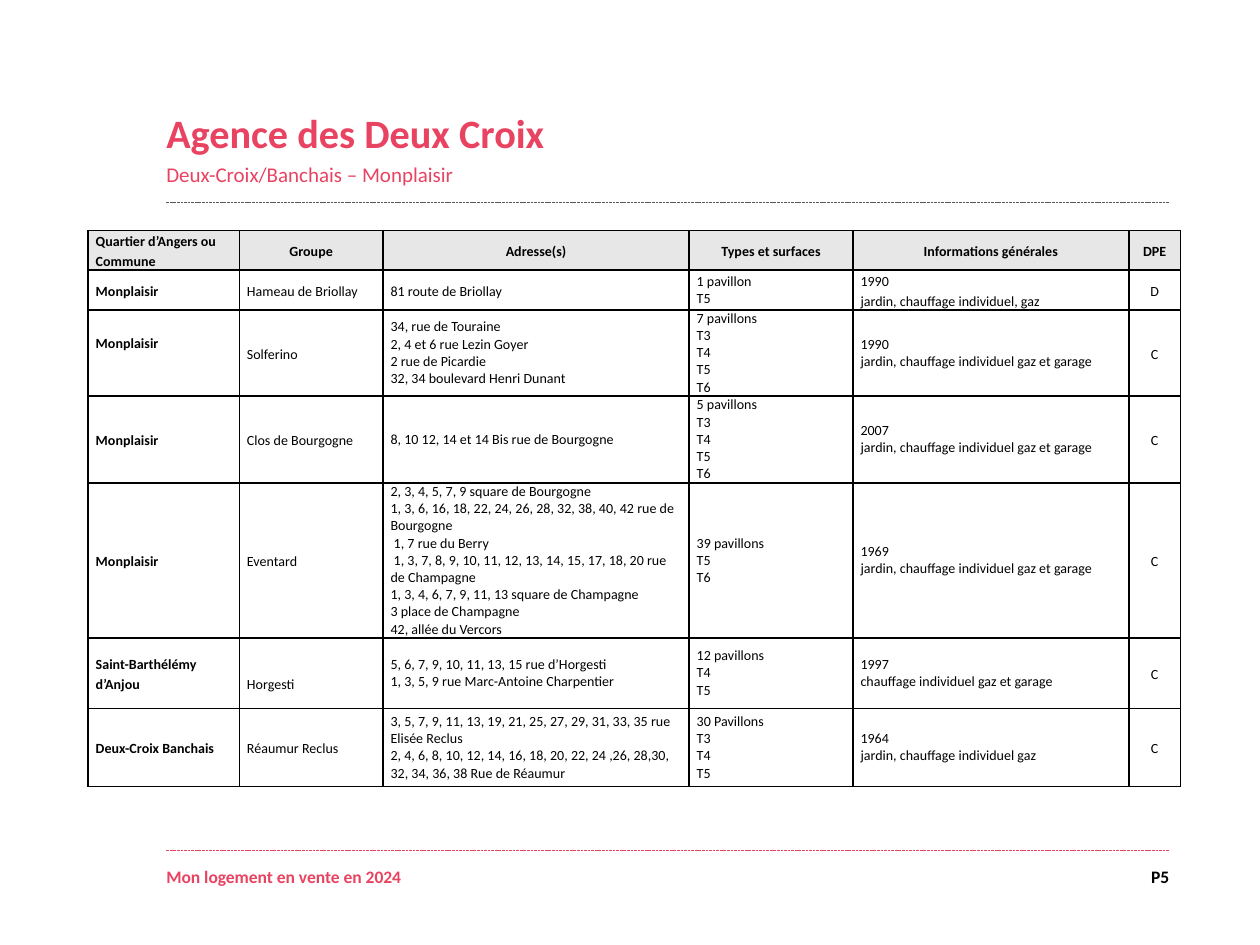
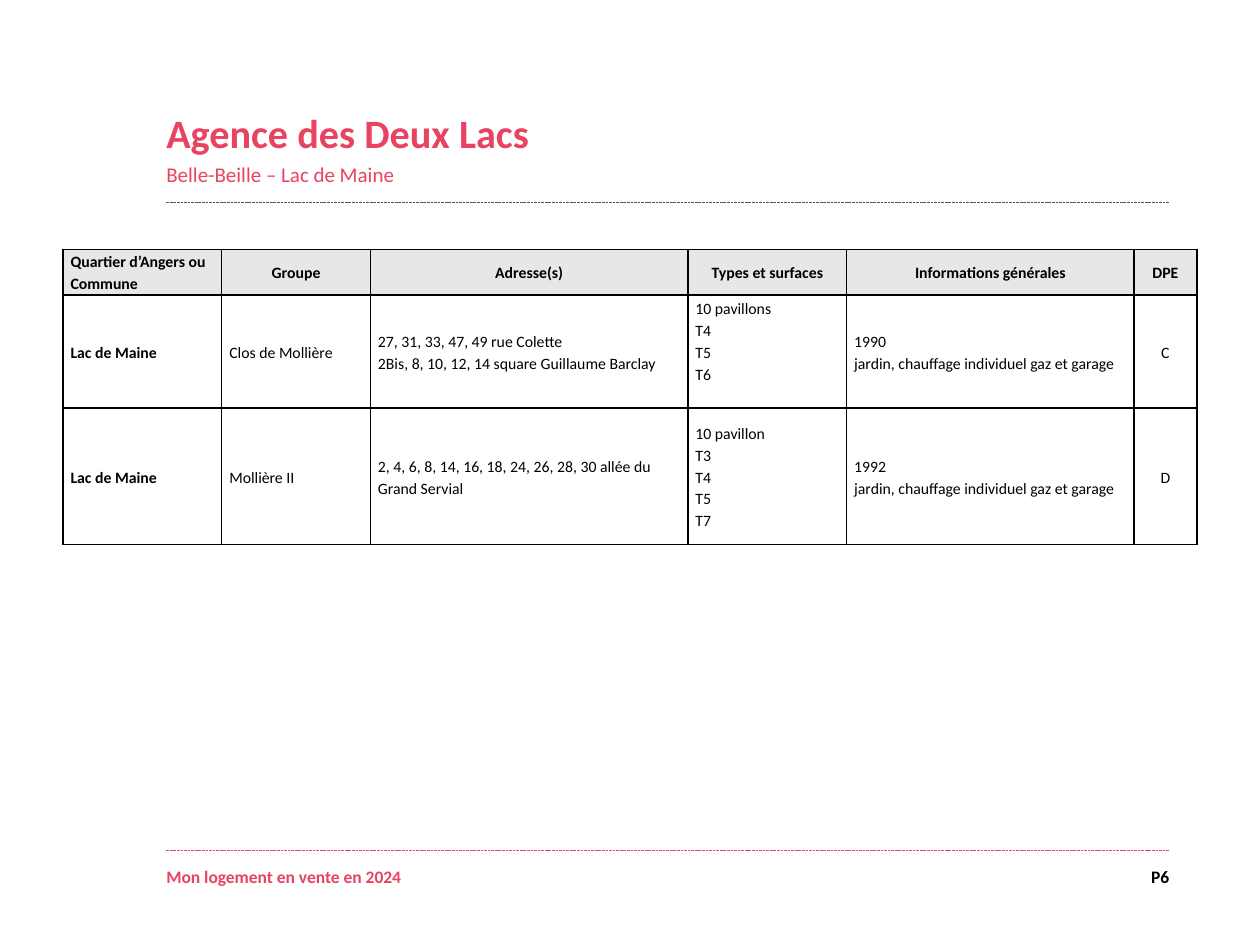
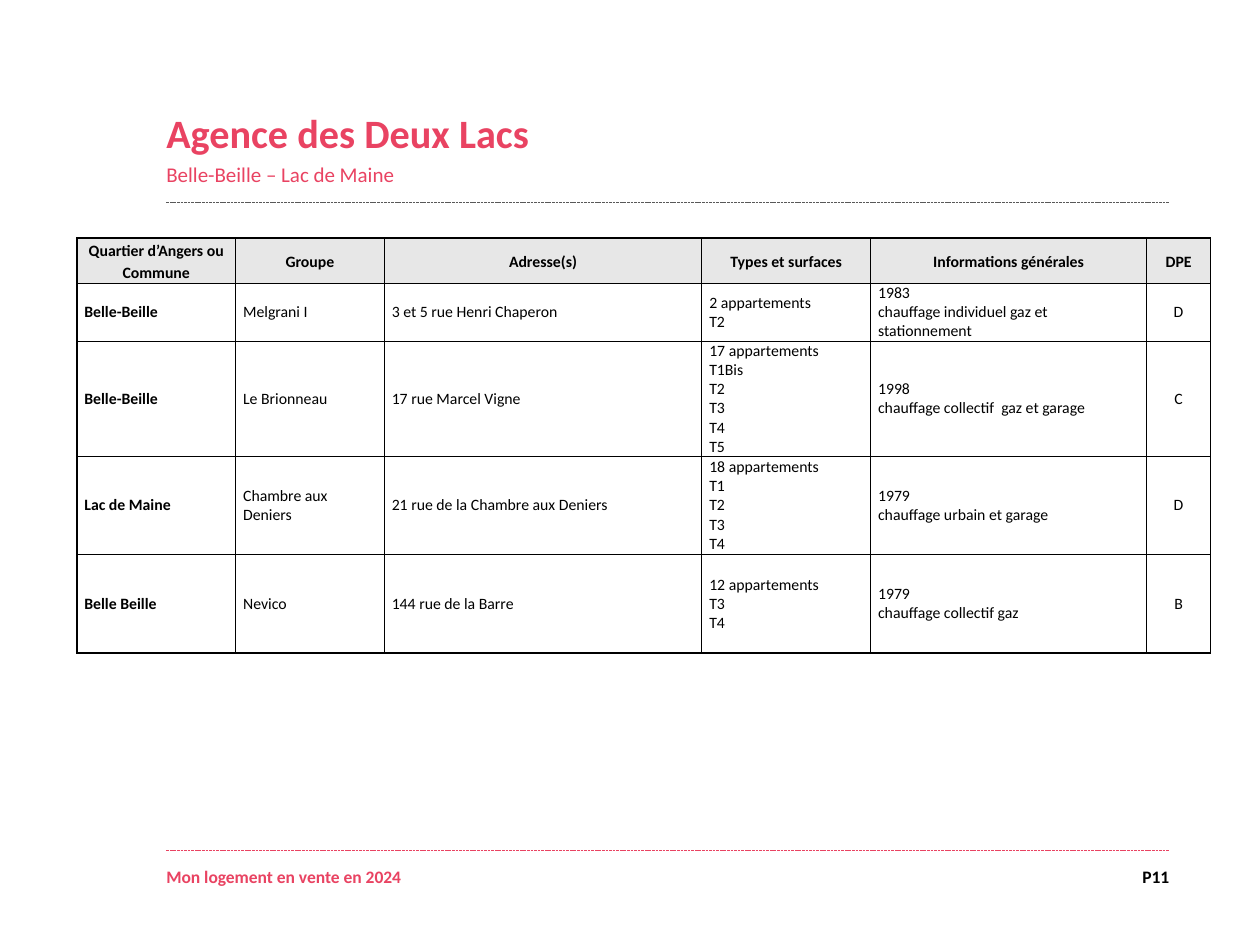
"""Build the three housing-sale slides, each with one agency table."""
from dataclasses import dataclass

from lxml import etree
from pptx import Presentation
from pptx.dml.color import RGBColor as RGB
from pptx.enum.dml import MSO_LINE
from pptx.enum.shapes import MSO_CONNECTOR as CONN
from pptx.enum.text import MSO_ANCHOR as ANCHOR, MSO_AUTO_SIZE as AUTO, PP_ALIGN as ALIGN
from pptx.oxml.ns import qn
from pptx.util import Inches, Pt


@dataclass(frozen=True)
class Theme:
    font: str = "Calibri"
    accent: RGB = RGB(0xE9, 0x43, 0x62)
    ink: RGB = RGB(0, 0, 0)
    rule: RGB = RGB(0x59, 0x59, 0x59)
    header: RGB = RGB(0xE7, 0xE7, 0xE7)
    title: int = 23
    subtitle: int = 12
    footer: int = 10
    left: float = 1.32
    right: float = 9.28


HEADERS = ["Quartier d’Angers ou Commune", "Groupe", "Adresse(s)",
           "Types et surfaces", "Informations générales", "DPE"]
FOOTER = "Mon logement en vente en 2024"
GARDEN_GARAGE = "jardin, chauffage individuel gaz et garage"


def apply(obj, **fmt):
    for name, value in fmt.items():
        setattr(obj, name, value)


class Deck:
    def __init__(self, theme):
        self.theme = theme
        self.prs = Presentation()
        apply(self.prs, slide_width=Inches(10), slide_height=Inches(7.5))
        self.s = None

    def add_text(self, p, text, size, color, bold=False, **fmt):
        apply(p, **fmt)
        r = p.add_run()
        r.text = text
        apply(r.font, name=self.theme.font, size=Pt(size), bold=bold)
        r.font.color.rgb = color

    def frame(self, tf, anchor=ANCHOR.TOP):
        apply(tf, word_wrap=True, auto_size=AUTO.NONE, vertical_anchor=anchor,
              margin_left=0, margin_right=0, margin_top=0, margin_bottom=0)
        return tf

    def rule(self, y, color):
        t = self.theme
        line = self.s.shapes.add_connector(
            CONN.STRAIGHT, Inches(t.left), Inches(y), Inches(t.right), Inches(y))
        apply(line.line, width=Pt(0.5), dash_style=MSO_LINE.SQUARE_DOT)
        line.line.color.rgb = color
        etree.SubElement(line._element.spPr, qn("a:effectLst"))

    def title(self, text, subtitle):
        t, sp = self.theme, self.s.shapes.title
        apply(sp, left=Inches(t.left), top=Inches(0.73),
              width=Inches(6.24), height=Inches(0.75))
        tf = self.frame(sp.text_frame, ANCHOR.BOTTOM)
        self.add_text(tf.paragraphs[0], text, t.title, t.accent, True,
                      alignment=ALIGN.LEFT, space_before=Pt(0))
        self.add_text(tf.add_paragraph(), subtitle, t.subtitle, t.accent,
                      alignment=ALIGN.LEFT, space_before=Pt(2.4))

    def label(self, text, x, width, color, align):
        sp = self.s.shapes.add_textbox(Inches(x), Inches(6.87), Inches(width), Inches(0.2))
        tf = self.frame(sp.text_frame)
        self.add_text(tf.paragraphs[0], text, self.theme.footer, color, True, alignment=align)

    def slide(self, title, subtitle, page):
        t = self.theme
        self.s = self.prs.slides.add_slide(self.prs.slide_layouts[5])
        self.rule(1.61, t.rule)
        self.rule(6.75, t.accent)
        self.title(title, subtitle)
        self.label(FOOTER, t.left, 7.62, t.accent, ALIGN.LEFT)
        self.label(page, 8.94, 0.34, t.ink, ALIGN.RIGHT)

    def borders(self, cell):
        tc_pr = cell._tc.get_or_add_tcPr()
        for side in ("lnL", "lnR", "lnT", "lnB"):
            ln = etree.SubElement(tc_pr, qn(f"a:{side}"), w=str(Pt(1)))
            fill = etree.SubElement(ln, qn("a:solidFill"))
            etree.SubElement(fill, qn("a:srgbClr"), val=str(self.theme.ink))

    def cell(self, cell, text, size, bold, align, spacing, header):
        apply(cell, vertical_anchor=ANCHOR.MIDDLE, margin_left=Inches(0.06),
              margin_right=Inches(0.06), margin_top=0, margin_bottom=0)
        self.borders(cell)
        if header:
            cell.fill.solid()
            cell.fill.fore_color.rgb = self.theme.header
        else:
            cell.fill.background()
        tf = cell.text_frame
        for k, line in enumerate(text.split("\n")):
            p = tf.add_paragraph() if k else tf.paragraphs[0]
            if line.startswith(" "):
                p._p.get_or_add_pPr().set("indent", str(Pt(1.8)))
            self.add_text(p, line.strip(), size, self.theme.ink, bold,
                          alignment=align, line_spacing=spacing)

    def table(self, x, y, cols, heights, rows, size, loose, first_header=ALIGN.LEFT, pads=None):
        grid = [HEADERS] + rows
        table = self.s.shapes.add_table(
            len(grid), len(cols), Inches(x), Inches(y),
            Inches(sum(cols)), Inches(sum(heights))).table
        apply(table, first_row=False, horz_banding=False)
        for col, width in zip(table.columns, cols):
            col.width = Inches(width)
        for row, height in zip(table.rows, heights):
            row.height = Inches(height)
        for i, row in enumerate(grid):
            for j, text in enumerate(row):
                header = i == 0
                align = ALIGN.CENTER if header or j == 5 else ALIGN.LEFT
                if header and j == 0:
                    align = first_header
                spacing = 1.15 if header or loose(i, j) else 1.0
                self.cell(table.cell(i, j), text, size, header or j == 0,
                          align, spacing, header)
        for (i, j), pad in (pads or {}).items():
            apply(table.cell(i, j), **pad)


DEUX_CROIX = [
    ["Monplaisir", "Hameau de Briollay", "81 route de Briollay", "1 pavillon\nT5",
     "1990\njardin, chauffage individuel, gaz", "D"],
    ["Monplaisir", "Solferino",
     "34, rue de Touraine\n2, 4 et 6 rue Lezin Goyer\n2 rue de Picardie\n"
     "32, 34 boulevard Henri Dunant",
     "7 pavillons\nT3\nT4\nT5\nT6", f"1990\n{GARDEN_GARAGE}", "C"],
    ["Monplaisir", "Clos de Bourgogne", "8, 10 12, 14 et 14 Bis rue de Bourgogne",
     "5 pavillons\nT3\nT4\nT5\nT6", f"2007\n{GARDEN_GARAGE}", "C"],
    ["Monplaisir", "Eventard",
     "2, 3, 4, 5, 7, 9 square de Bourgogne\n"
     "1, 3, 6, 16, 18, 22, 24, 26, 28, 32, 38, 40, 42 rue de Bourgogne\n"
     " 1, 7 rue du Berry\n"
     " 1, 3, 7, 8, 9, 10, 11, 12, 13, 14, 15, 17, 18, 20 rue de Champagne\n"
     "1, 3, 4, 6, 7, 9, 11, 13 square de Champagne\n"
     "3 place de Champagne\n42, allée du Vercors",
     "39 pavillons\nT5\nT6", f"1969\n{GARDEN_GARAGE}", "C"],
    ["Saint-Barthélémy d’Anjou", "Horgesti",
     "5, 6, 7, 9, 10, 11, 13, 15 rue d’Horgesti\n1, 3, 5, 9 rue Marc-Antoine Charpentier",
     "12 pavillons\nT4\nT5", "1997\nchauffage individuel gaz et garage", "C"],
    ["Deux-Croix Banchais", "Réaumur Reclus",
     "3, 5, 7, 9, 11, 13, 19, 21, 25, 27, 29, 31, 33, 35 rue Elisée Reclus\n"
     "2, 4, 6, 8, 10, 12, 14, 16, 18, 20, 22, 24 ,26, 28,30, 32, 34, 36, 38 Rue de Réaumur",
     "30 Pavillons\nT3\nT4\nT5", "1964\njardin, chauffage individuel gaz", "C"],
]
LACS_HOUSES = [
    ["Lac de Maine", "Clos de Mollière",
     "27, 31, 33, 47, 49 rue Colette\n2Bis, 8, 10, 12, 14 square Guillaume Barclay",
     "10 pavillons\nT4\nT5\nT6", f"1990\n{GARDEN_GARAGE}", "C"],
    ["Lac de Maine", "Mollière II",
     "2, 4, 6, 8, 14, 16, 18, 24, 26, 28, 30 allée du Grand Servial",
     "10 pavillon\nT3\nT4\nT5\nT7", f"1992\n{GARDEN_GARAGE}", "D"],
]
LACS_FLATS = [
    ["Belle-Beille", "Melgrani I", "3 et 5 rue Henri Chaperon", "2 appartements\nT2",
     "1983\nchauffage individuel gaz et stationnement", "D"],
    ["Belle-Beille", "Le Brionneau", "17 rue Marcel Vigne",
     "17 appartements\nT1Bis\nT2\nT3\nT4\nT5", "1998\nchauffage collectif  gaz et garage", "C"],
    ["Lac de Maine", "Chambre aux Deniers", "21 rue de la Chambre aux Deniers",
     "18 appartements\nT1\nT2\nT3\nT4", "1979\nchauffage urbain et garage", "D"],
    ["Belle Beille", "Nevico", "144 rue de la Barre", "12 appartements\nT3\nT4",
     "1979\nchauffage collectif gaz", "B"],
]


def main():
    deck = Deck(Theme())
    lacs = ("Agence des Deux Lacs", "Belle-Beille – Lac de Maine")

    deck.slide("Agence des Deux Croix", "Deux-Croix/Banchais – Monplaisir", "P5")
    deck.table(0.7, 1.83, [1.2, 1.14, 2.43, 1.3, 2.19, 0.41],
               [0.31, 0.31, 0.68, 0.69, 1.22, 0.56, 0.62], DEUX_CROIX, 8,
               lambda i, j: j in (0, 1, 5) or (i == 1 and j != 3),
               pads={(2, 0): {"margin_bottom": Inches(0.16)},
                     (5, 1): {"margin_top": Inches(0.16)}})

    deck.slide(*lacs, "P6")
    deck.table(0.5, 1.98, [1.26, 1.18, 2.52, 1.26, 2.28, 0.5],
               [0.36, 0.9, 1.08], LACS_HOUSES, 9, lambda i, j: True,
               pads={(1, 3): {"margin_bottom": Inches(0.17)}})

    deck.slide(*lacs, "P11")
    deck.table(0.61, 1.89, [1.26, 1.18, 2.52, 1.34, 2.19, 0.51],
               [0.36, 0.46, 0.91, 0.78, 0.78], LACS_FLATS, 9, lambda i, j: False,
               first_header=ALIGN.CENTER)

    deck.prs.save("out.pptx")


if __name__ == "__main__":
    main()
